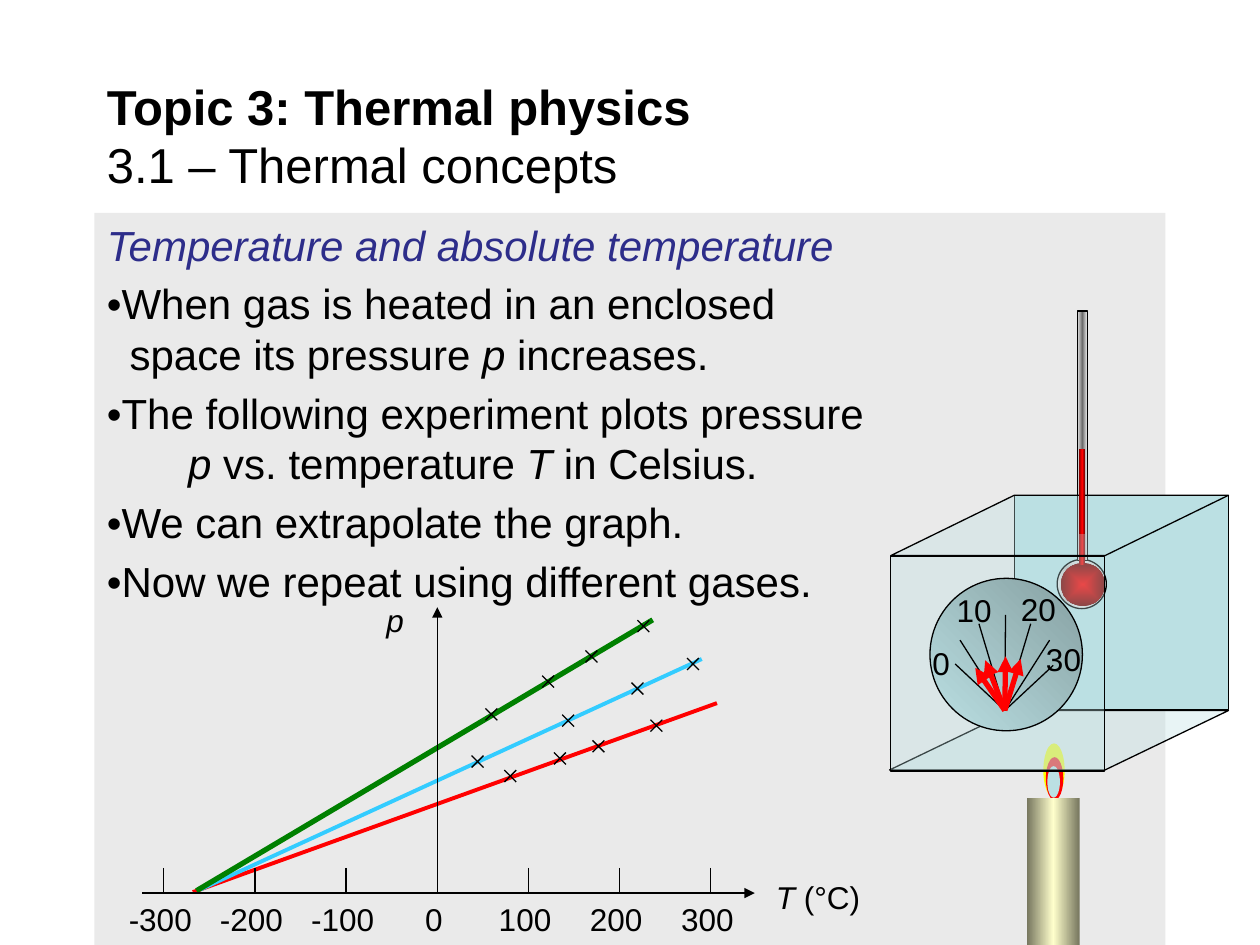
import pptx
import pptx.util
import pptx.dml.color
import pptx.enum.shapes
import pptx.enum.text
import pptx.oxml
import pptx.oxml.ns

Pt = pptx.util.Pt
RGBColor = pptx.dml.color.RGBColor
PRESET = pptx.enum.shapes.MSO_SHAPE
ALIGN = pptx.enum.text.PP_ALIGN
ANCHOR = pptx.enum.text.MSO_ANCHOR
qn = pptx.oxml.ns.qn
NS = pptx.oxml.ns.nsdecls("a")

BLACK = RGBColor(0x00, 0x00, 0x00)
PANEL = RGBColor(0xEA, 0xEA, 0xEA)
HEADING = RGBColor(0x2D, 0x2D, 0x8A)
RED = RGBColor(0xFF, 0x00, 0x00)
DARK_RED = RGBColor(0x76, 0x00, 0x00)
BLUE = RGBColor(0x33, 0xCC, 0xFF)
GREEN = RGBColor(0x00, 0x80, 0x00)
YELLOW = RGBColor(0xFF, 0xFF, 0x00)
GLASS = RGBColor(0xBB, 0xE0, 0xE3)
DARK_GLASS = RGBColor(0x86, 0xA0, 0xA2)
GREY = RGBColor(0x6C, 0x6C, 0x6C)
WAX = RGBColor(0xFF, 0xFF, 0xCC)
DARK_WAX = RGBColor(0x76, 0x76, 0x5E)

deck = pptx.Presentation()
deck.slide_width, deck.slide_height = Pt(720), Pt(540)
slide = deck.slides.add_slide(deck.slide_layouts[6])


def add_text(paragraphs, left, top, width, height, size=18, align=ALIGN.LEFT,
             anchor=ANCHOR.TOP, wrap=True, space_before=0):
    """Each paragraph is (hanging indent, runs); a run is (text, font settings)."""
    frame = slide.shapes.add_textbox(Pt(left), Pt(top), Pt(width), Pt(height)).text_frame
    frame.word_wrap = wrap
    frame.vertical_anchor = anchor
    for index, (hanging, runs) in enumerate(paragraphs):
        paragraph = frame.add_paragraph() if index else frame.paragraphs[0]
        paragraph.alignment = align
        if index:
            paragraph.space_before = Pt(space_before)
        if hanging:
            properties = paragraph._p.get_or_add_pPr()
            properties.set("marL", str(Pt(hanging)))
            properties.set("indent", str(-Pt(hanging)))
        for text, settings in runs:
            if text == "\n":
                paragraph.add_line_break()
                continue
            run = paragraph.add_run()
            run.text = text
            run.font.name = "Arial"
            run.font.size = Pt(size)
            run.font.color.rgb = settings.get("color", BLACK)
            run.font.bold = settings.get("bold", False)
            run.font.italic = settings.get("italic", False)


def add_line(start, end, color=BLACK, width=0.75, arrow=False):
    line = slide.shapes.add_connector(
        pptx.enum.shapes.MSO_CONNECTOR.STRAIGHT, *[Pt(v) for v in (*start, *end)])
    line.line.color.rgb = color
    line.line.width = Pt(width)
    if arrow:
        line.line._get_or_add_ln().append(
            pptx.oxml.parse_xml(f'<a:tailEnd {NS} type="triangle"/>'))
    line._element.spPr.append(pptx.oxml.parse_xml(f"<a:effectLst {NS}/>"))


# Panel and words
panel = slide.shapes.add_shape(PRESET.RECTANGLE, Pt(54), Pt(121.7), Pt(612), Pt(418.3))
panel.shadow.inherit = False
panel.fill.solid()
panel.fill.fore_color.rgb = PANEL
panel.line.fill.background()

PLAIN, ITALIC = {}, {"italic": True}
add_text([(0, [("Topic 3: Thermal physics", {"bold": True}), ("\n", PLAIN),
               ("3.1 – Thermal concepts", PLAIN)])],
         54, 41.8, 612, 70.6, size=28, anchor=ANCHOR.MIDDLE)
add_text([
    (0, [("Temperature and absolute temperature", {"italic": True, "color": HEADING})]),
    (13, [("•When gas is heated in an enclosed", PLAIN), ("\n", PLAIN),
          ("space its pressure ", PLAIN), ("p ", ITALIC), ("increases.", PLAIN)]),
    (46.5, [("•The following experiment plots pressure", PLAIN), ("\n", PLAIN),
            ("p ", ITALIC), ("vs. temperature ", PLAIN), ("T ", ITALIC),
            ("in Celsius.", PLAIN)]),
    (0, [("•We can extrapolate the graph.", PLAIN)]),
    (0, [("•Now we repeat using different gases.", PLAIN)]),
], 54, 121.7, 612, 230, size=24, space_before=4.8)

# Graph: one line and four readings for each gas
gases = [
    (RED, 2.25, (110.2, 509.8), (409.7, 401.8),
     [(291.6, 443.5), (320, 433.4), (342, 426.5), (375.1, 414.7)]),
    (BLUE, 2.25, (114.5, 508.3), (401, 376.6),
     [(272.9, 435.2), (324.7, 411.8), (364.3, 393.5), (396, 379.4)]),
    (GREEN, 3, (112.3, 509), (373, 354.2),
     [(280.8, 408.2), (313.2, 389.5), (338, 375.1), (367.6, 357.8)]),
]
CROSS = 3.4
for color, width, start, end, readings in gases:
    add_line(start, end, color, width)
for color, width, start, end, readings in gases:
    for x, y in readings:
        for rise in (CROSS, -CROSS):
            add_line((x - CROSS, y - rise), (x + CROSS, y + rise))

AXIS_Y, ORIGIN_X, STEP = 510.3, 249.9, 52.1
add_line((ORIGIN_X, AXIS_Y), (ORIGIN_X, 347), arrow=True)
add_line((81.4, AXIS_Y), (431.3, AXIS_Y), arrow=True)
for hundreds in range(-3, 4):
    x = ORIGIN_X + hundreds * STEP
    if hundreds:
        add_line((x, 496), (x, AXIS_Y))
    add_text([(0, [(str(hundreds * 100), PLAIN)])], x - 37, AXIS_Y + 0.5, 70, 28.8,
             align=ALIGN.CENTER, wrap=False)
add_text([(0, [("p", ITALIC)])], 213.8, 339.8, 24.5, 28.8, wrap=False)
add_text([(0, [("T", ITALIC), (" (°C)", PLAIN)])], 436.3, 498.2, 72, 28.8)

# Apparatus, back to front: outline, box, colours, gradient angle, opacity, outlined
RECT, OVAL, CENTRE = PRESET.RECTANGLE, PRESET.OVAL, "centre"
MERCURY = [DARK_RED, RED, DARK_RED]
bottom_pane = [(508.3, 440), (578.9, 406), (702, 406), (631.4, 440)]
top_pane = [(509, 317.5), (579.6, 283), (702, 283), (631.4, 317.5)]
parts = [
    (RECT, (579.6, 283, 122.4, 122.4), [GLASS], None, 100, True),
    (OVAL, (596.2, 424.8, 12.2, 31), [YELLOW], None, 100, False),
    (OVAL, (597.6, 432.7, 10, 24.5), [RED], None, 100, False),
    (RECT, (586.8, 455.8, 30.2, 84.2), [DARK_WAX, WAX, DARK_WAX], 0, 100, False),
    (OVAL, (598.5, 437.8, 7.2, 18), [GLASS], None, 100, False),
    (OVAL, (604.1, 319.7, 28.1, 28.1), [GREY, PANEL], CENTRE, 100, True),
    (RECT, (615.6, 177.8, 5.8, 142.6), [PANEL, GREY, PANEL], 0, 100, True),
    (OVAL, (606.2, 321.8, 25.2, 24.5), [RED, DARK_RED], CENTRE, 100, False),
    (RECT, (616.5, 304.6, 3.6, 18), MERCURY, 0, 100, False),
    (bottom_pane, None, [GLASS], None, 33, True),
    (RECT, (509, 318.2, 122.4, 122.4), [GLASS], None, 32, True),
    (top_pane, None, [GLASS], None, 33, True),
    (OVAL, (531.4, 330.5, 87.1, 87.1), [GLASS, DARK_GLASS], 315, 100, True),
    (RECT, (616.5, 256.3, 3.6, 49), MERCURY, 0, 100, False),
]
for outline, box, colors, angle, opacity, outlined in parts:
    if box:
        part = slide.shapes.add_shape(outline, *[Pt(v) for v in box])
    else:
        corners = [(Pt(x), Pt(y)) for x, y in outline]
        builder = slide.shapes.build_freeform(*corners[0])
        builder.add_line_segments(corners[1:], close=True)
        part = builder.convert_to_shape()
    part.shadow.inherit = False
    if outlined:
        part.line.color.rgb = BLACK
        part.line.width = Pt(0.75)
    else:
        part.line.fill.background()
    if angle is None:
        part.fill.solid()
        part.fill.fore_color.rgb = colors[0]
        if opacity < 100:
            part._element.spPr.find(qn("a:solidFill"))[0].append(
                pptx.oxml.parse_xml(f'<a:alpha {NS} val="{opacity * 1000}"/>'))
        continue
    part.fill.gradient()
    gradient = part._element.spPr.find(qn("a:gradFill"))
    for child in list(gradient):
        gradient.remove(child)
    stops = "".join(
        f'<a:gs pos="{100000 * i // (len(colors) - 1)}"><a:srgbClr val="{color}"/></a:gs>'
        for i, color in enumerate(colors))
    gradient.append(pptx.oxml.parse_xml(f"<a:gsLst {NS}>{stops}</a:gsLst>"))
    gradient.append(pptx.oxml.parse_xml(
        f'<a:path {NS} path="shape"><a:fillToRect l="50000" t="50000" r="50000" b="50000"/></a:path>'
        if angle == CENTRE else f'<a:lin {NS} ang="{angle * 60000}" scaled="1"/>'))

# Pressure gauge
PIVOT = (574.2, 406)
for mark in [(545.8, 379.4), (601.9, 380.2), (548.6, 365.8), (599.8, 365.8),
             (559.4, 356.4), (589, 356.4), (574.6, 351.4)]:
    add_line(PIVOT, mark)
for reading, x, y in [("0", 537.8, 378.7), ("10", 556.6, 348.5),
                      ("20", 593.3, 347.8), ("30", 607.7, 376.6)]:
    add_text([(0, [(reading, PLAIN)])], x - 20, y - 14.4, 40, 28.8,
             align=ALIGN.CENTER, wrap=False)
for needle_tip in [(557.3, 381.6), (563, 377.3), (574.6, 375.1), (583.2, 376.6)]:
    add_line(PIVOT, needle_tip, RED, 3, arrow=True)

deck.save("out.pptx")
